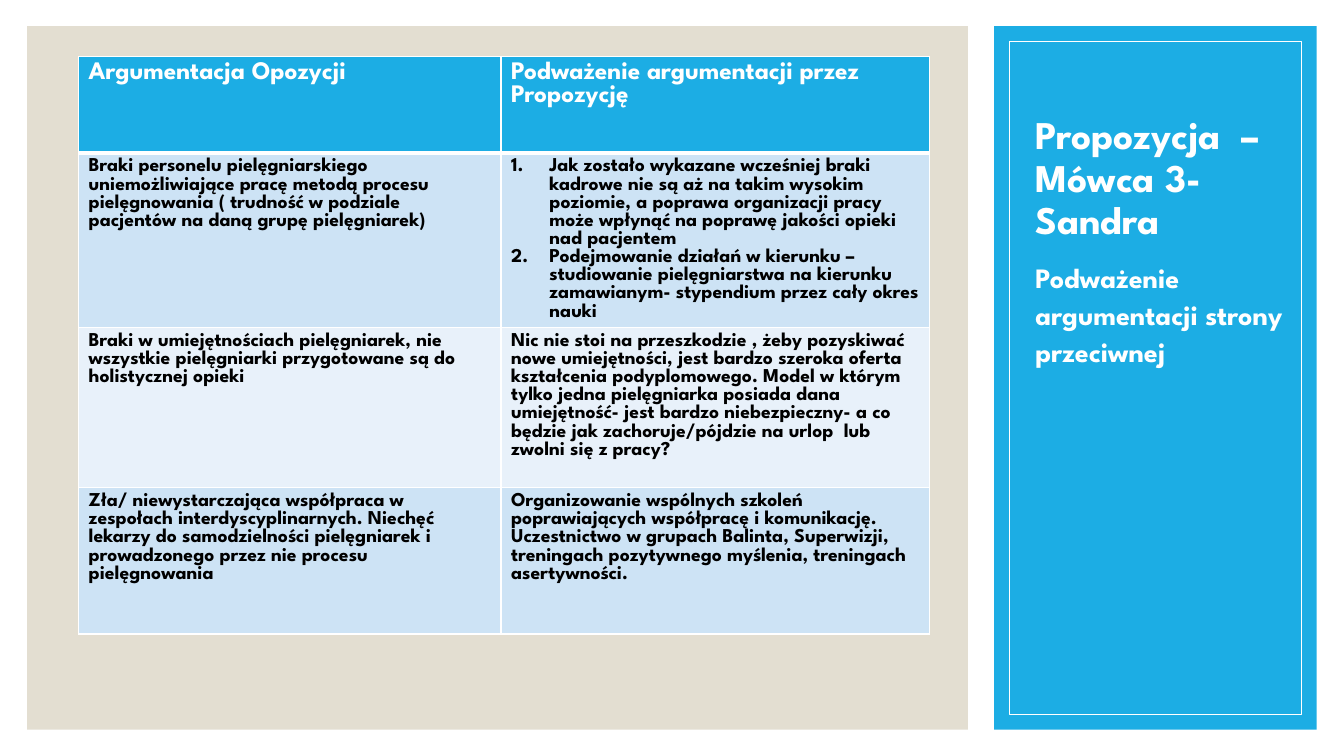
from pptx import Presentation
from pptx.dml.color import RGBColor as Rgb
from pptx.enum.shapes import MSO_SHAPE as Shape
from pptx.enum.text import MSO_ANCHOR as Anchor
from pptx.oxml import parse_xml
from pptx.oxml.ns import nsdecls
from pptx.util import Pt

PX = 9144  # 100 px to the inch
FONT = "League Spartan"
HEX = {"white": "FFFFFF", "black": "000000", "sand": "E3DED1",
       "blue": "1CADE4", "dark": "CDE3F5", "light": "E8F1FA"}
COLS = [419, 425]
HIGH = [96, 173, 159, 145]
ROWS = [
    ("Argumentacja Opozycji", "Podważenie argumentacji przez Propozycję"),
    ("Braki personelu pielęgniarskiego uniemożliwiające pracę metodą procesu "
     "pielęgnowania ( trudność w podziale pacjentów na daną grupę pielęgniarek)",
     "Jak zostało wykazane wcześniej braki kadrowe nie są aż na takim wysokim "
     "poziomie, a poprawa organizacji pracy może wpłynąć na poprawę jakości "
     "opieki nad pacjentem\n"
     "Podejmowanie działań w kierunku – studiowanie pielęgniarstwa na kierunku "
     "zamawianym- stypendium przez cały okres nauki"),
    ("Braki w umiejętnościach pielęgniarek, nie wszystkie pielęgniarki "
     "przygotowane są do holistycznej opieki",
     "Nic nie stoi na przeszkodzie , żeby pozyskiwać nowe umiejętności, jest "
     "bardzo szeroka oferta kształcenia podyplomowego. Model w którym tylko "
     "jedna pielęgniarka posiada dana umiejętność- jest bardzo niebezpieczny- "
     "a co będzie jak zachoruje/pójdzie na urlop  lub zwolni się z pracy?"),
    ("Zła/ niewystarczająca współpraca w zespołach interdyscyplinarnych. "
     "Niechęć lekarzy do samodzielności pielęgniarek i prowadzonego przez nie "
     "procesu pielęgnowania",
     "Organizowanie wspólnych szkoleń poprawiających współpracę i komunikację.\n"
     "Uczestnictwo w grupach Balinta, Superwizji, treningach pozytywnego "
     "myślenia, treningach asertywności."),
]


def color(name):
    return Rgb.from_string(HEX[name])


def style(frame, size, name):
    for para in frame.paragraphs:
        for run in para.runs:
            font = run.font
            font.name, font.size, font.bold = FONT, Pt(size), True
            font.color.rgb = color(name)


def panel(slide, box, fill=None, line=None):
    rect = slide.shapes.add_shape(Shape.RECTANGLE, *(n * PX for n in box))
    rect.shadow.inherit = False
    if fill:
        rect.fill.solid()
        rect.fill.fore_color.rgb = color(fill)
    else:
        rect.fill.background()
    if line:
        rect.line.color.rgb = color(line)
        rect.line.width = Pt(0.5)
    else:
        rect.line.fill.background()


def fill_holder(holder, box, text, size, anchor, space, before):
    holder.left, holder.top, holder.width, holder.height = (n * PX for n in box)
    frame = holder.text_frame
    frame.text = text
    frame.word_wrap = True
    frame.vertical_anchor = anchor
    para = frame.paragraphs[0]
    para.line_spacing = space
    para.space_before = Pt(before)
    style(frame, size, "white")


def border(cell, head):
    props = cell._tc.get_or_add_tcPr()
    for i, side in enumerate(("lnL", "lnR", "lnT", "lnB")):
        wide = Pt(3 if head and side == "lnB" else 1)
        props.insert(i, parse_xml(
            f'<a:{side} {nsdecls("a")} w="{wide}"><a:solidFill>'
            f'<a:srgbClr val="{HEX["white"]}"/></a:solidFill></a:{side}>'))


def number(frame):
    for para in frame.paragraphs:
        props = para._p.get_or_add_pPr()
        props.set("marL", str(38 * PX))
        props.set("indent", str(-38 * PX))
        props.append(parse_xml(
            f'<a:buFont {nsdecls("a")} typeface="+mj-lt"/>'))
        props.append(parse_xml(
            f'<a:buAutoNum {nsdecls("a")} type="arabicPeriod"/>'))


def add_grid(slide, left, top):
    grid = slide.shapes.add_table(
        len(ROWS), len(COLS), left * PX, top * PX,
        sum(COLS) * PX, sum(HIGH) * PX).table
    for col, wide in zip(grid.columns, COLS):
        col.width = wide * PX
    for r, texts in enumerate(ROWS):
        grid.rows[r].height = HIGH[r] * PX
        head = r == 0
        for c, text in enumerate(texts):
            cell = grid.cell(r, c)
            cell.text_frame.text = text
            style(cell.text_frame, 18 if head else 14,
                  "white" if head else "black")
            cell.fill.solid()
            cell.fill.fore_color.rgb = color(
                "blue" if head else "dark" if r % 2 else "light")
            border(cell, head)
    number(grid.cell(1, 1).text_frame)


def main():
    prs = Presentation()
    prs.slide_width, prs.slide_height = 1333 * PX, 750 * PX
    slide = prs.slides.add_slide(prs.slide_layouts[7])
    title, spare, body = slide.placeholders
    spare._element.getparent().remove(spare._element)

    # Panels, kept behind the placeholders
    panel(slide, (27, 26, 933, 698), "sand")
    panel(slide, (986, 26, 320, 698), "blue")
    panel(slide, (1001, 41, 290, 668), line="white")
    for holder in (title, body):
        slide.shapes._spTree.append(holder._element)

    # Side column
    fill_holder(title, (1017, 66, 266, 180), "Propozycja  – Mówca 3- Sandra",
                28, Anchor.BOTTOM, 0.9, 0)
    fill_holder(body, (1017, 250, 266, 383),
                "Podważenie argumentacji strony przeciwnej",
                20, Anchor.TOP, 1.1, 8)

    # Arguments and replies
    add_grid(slide, 78, 56)
    prs.save("out.pptx")


if __name__ == "__main__":
    main()
